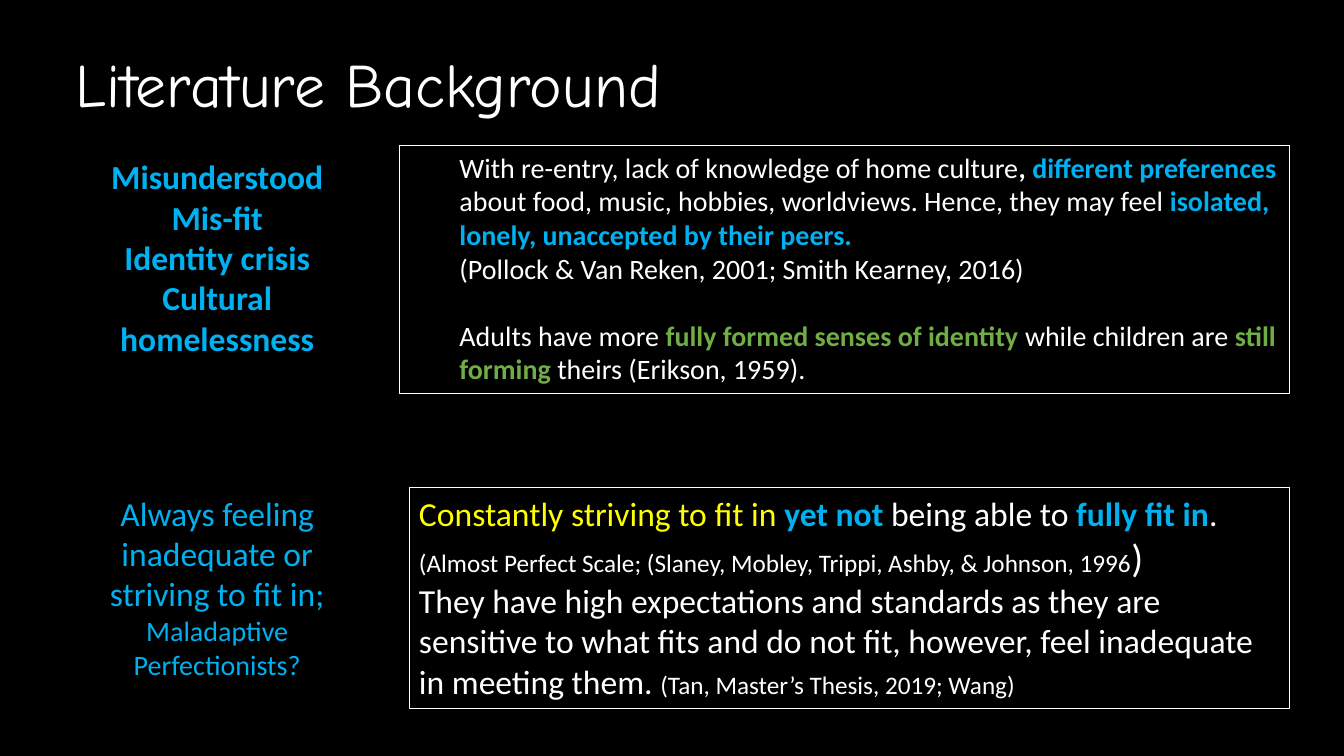
from pptx import Presentation
from pptx.dml.color import RGBColor
from pptx.enum.shapes import MSO_SHAPE
from pptx.enum.text import MSO_ANCHOR, PP_ALIGN
from pptx.util import Cm, Pt

WHITE, BLUE, GREEN, YELLOW = "FFFFFF", "00B0F0", "70AD47", "FFFF00"


def color(code):
    return RGBColor.from_string(code)


class Deck:
    """Holds the style and the current slide."""

    font = "Calibri"

    def __init__(self):
        self.prs = Presentation()
        self.prs.slide_width, self.prs.slide_height = Cm(33.87), Cm(19.05)
        self.slide = self.prs.slides.add_slide(self.prs.slide_layouts[6])
        fill = self.slide.background.fill
        fill.solid()
        fill.fore_color.rgb = color("000000")

    def add_text(self, shape, paras, align, font=None):
        """Each paragraph is a list of runs: (text, size, colour, bold)."""
        frame = shape.text_frame
        frame.word_wrap = True
        for i, runs in enumerate(paras):
            para = frame.paragraphs[0] if i == 0 else frame.add_paragraph()
            para.alignment = align
            for text, size, tint, bold in runs:
                run = para.add_run()
                run.text = text
                run.font.name = font or self.font
                run.font.size = Pt(size)
                run.font.bold = bold
                run.font.color.rgb = color(tint)
        return frame

    def label(self, x, y, w, h, paras, align=PP_ALIGN.CENTER, font=None):
        box = self.slide.shapes.add_textbox(Cm(x), Cm(y), Cm(w), Cm(h))
        return self.add_text(box, paras, align, font)

    def panel(self, x, y, w, h, paras):
        box = self.slide.shapes.add_shape(
            MSO_SHAPE.RECTANGLE, Cm(x), Cm(y), Cm(w), Cm(h))
        box.shadow.inherit = False
        box.fill.background()
        box.line.color.rgb = color(WHITE)
        box.line.width = Pt(0.75)
        frame = self.add_text(box, paras, PP_ALIGN.LEFT)
        frame.vertical_anchor = MSO_ANCHOR.TOP
        return frame


def main():
    deck = Deck()

    # Title
    title = deck.label(1.65, 0.41, 23.93, 3.58,
                       [[("Literature Background", 44, WHITE, False)]],
                       PP_ALIGN.LEFT, "Comic Neue")
    title.vertical_anchor = MSO_ANCHOR.MIDDLE
    title.paragraphs[0].line_spacing = 0.9

    # Identity: themes and findings
    themes = ["Misunderstood", "Mis-fit", "Identity crisis",
              "Cultural homelessness"]
    deck.label(1.35, 3.81, 8.25, 5.38,
               [[(theme, 24, BLUE, True)] for theme in themes])
    peers = deck.panel(10.06, 3.66, 22.45, 6.25, [
        [("With re-entry, lack of knowledge of home culture", 20, WHITE, False),
         (",", 20, WHITE, True),
         (" different preferences ", 20, BLUE, True),
         ("about food, music, hobbies, worldviews. Hence, they may feel ",
          20, WHITE, False),
         ("isolated, lonely, unaccepted by their peers.", 20, BLUE, True)],
        [("(Pollock & Van Reken, 2001; Smith Kearney, 2016)",
          20, WHITE, False)],
        [("Adults have more ", 20, WHITE, False),
         ("fully formed senses of identity ", 20, GREEN, True),
         ("while children are ", 20, WHITE, False),
         ("still forming ", 20, GREEN, True),
         ("theirs (Erikson, 1959).", 20, WHITE, False)],
    ])
    peers.margin_left = Cm(1.52)
    peers.paragraphs[2].space_before = Pt(24)

    # Perfectionism: question and findings
    deck.label(1.65, 12.29, 7.65, 5.05, [
        [("Always feeling inadequate or striving to fit in;",
          24, BLUE, False)],
        [("Maladaptive Perfectionists?", 20, BLUE, False)],
    ])
    deck.panel(10.31, 12.29, 22.2, 5.56, [
        [("Constantly striving to fit in ", 24, YELLOW, False),
         ("yet not ", 24, BLUE, True),
         ("being able to ", 24, WHITE, False),
         ("fully fit in", 24, BLUE, True),
         (". ", 24, WHITE, False),
         ("(Almost Perfect Scale; (Slaney, Mobley, Trippi, Ashby, "
          "& Johnson, 1996", 18, WHITE, False),
         (")", 28, WHITE, False)],
        [("They have high expectations and standards as they are sensitive "
          "to what fits and do not fit, however, feel inadequate in meeting "
          "them. ", 24, WHITE, False),
         ("(Tan, Master’s Thesis, 2019; Wang)", 18, WHITE, False)],
    ])

    deck.prs.save("out.pptx")


if __name__ == "__main__":
    main()
